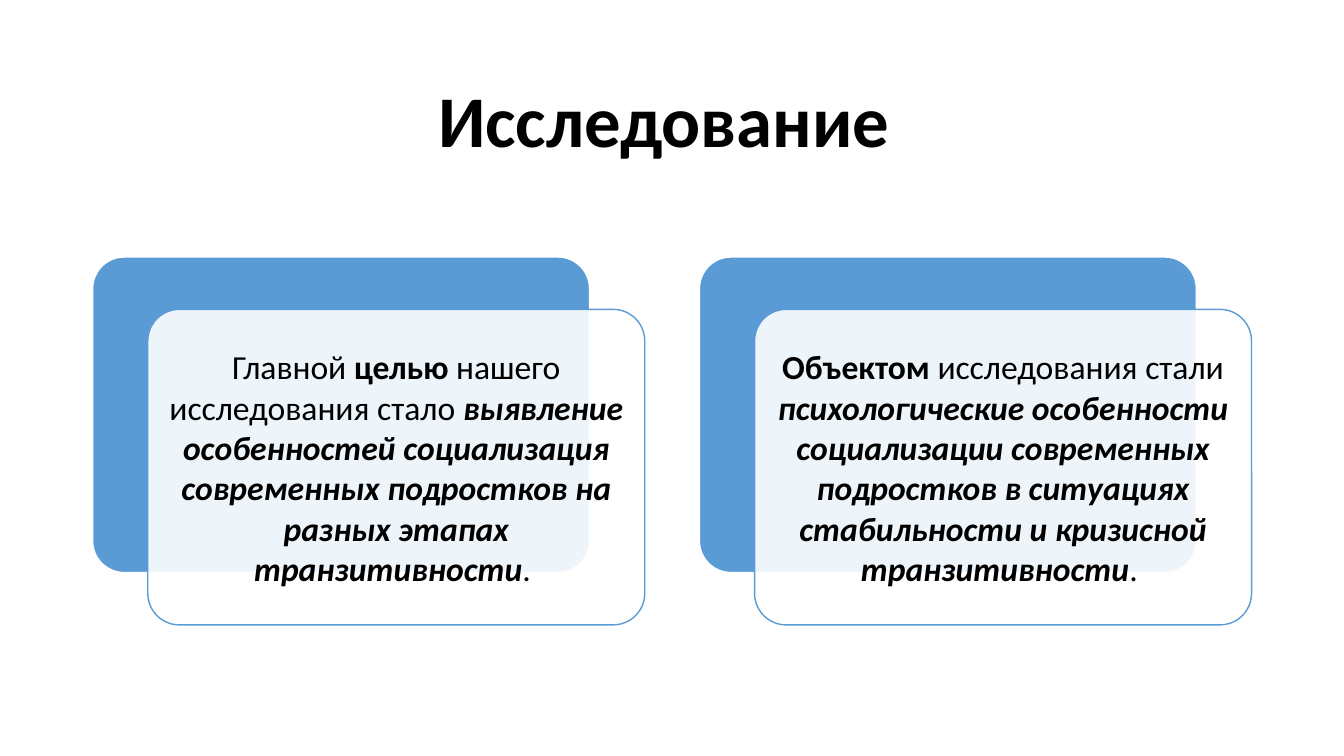
from lxml.etree import SubElement
from pptx import Presentation
from pptx.dml.color import RGBColor
from pptx.enum.shapes import MSO_SHAPE
from pptx.enum.text import MSO_ANCHOR, PP_ALIGN
from pptx.oxml.ns import qn
from pptx.util import Pt

COLORS = {"blue": "5B9BD5", "white": "FFFFFF", "black": "000000"}
FONT = "Calibri"

CARD_LEFT, CARD_TOP = 66.2, 183.6
CARD_WIDTH, CARD_HEIGHT = 355, 225.4
CARD_STEP = 433.4
FRONT_DX, FRONT_DY = 39.4, 37.4

# Each run is (text, bold, italic)
STATEMENTS = [
    [
        ("Главной ", False, False),
        ("целью", True, False),
        (" нашего исследования стало ", False, False),
        ("выявление особенностей социализация современных подростков "
         "на разных этапах транзитивности", True, True),
        (". ", False, False),
    ],
    [
        ("Объектом", True, False),
        (" исследования стали ", False, False),
        ("психологические особенности социализации современных подростков "
         "в ситуациях стабильности и кризисной транзитивности", True, True),
        (". ", False, False),
    ],
]


def rgb(name):
    return RGBColor.from_string(COLORS[name])


def write_centered(frame, runs, size):
    """Fill the frame with one centred paragraph and return the paragraph."""
    frame.word_wrap = True
    frame.vertical_anchor = MSO_ANCHOR.MIDDLE
    paragraph = frame.paragraphs[0]
    paragraph.alignment = PP_ALIGN.CENTER
    for text, bold, italic in runs:
        run = paragraph.add_run()
        run.text = text
        run.font.name = FONT
        run.font.size = Pt(size)
        run.font.bold = bold
        run.font.italic = italic
        run.font.color.rgb = rgb("black")
    return paragraph


def add_title(slide, text):
    title = slide.shapes.add_textbox(Pt(66.2), Pt(43.9), Pt(828), Pt(89.3))
    paragraph = write_centered(title.text_frame, [(text, True, False)], 52)
    paragraph.line_spacing = 0.9


def add_panel(slide, left, top, fill, line):
    panel = slide.shapes.add_shape(
        MSO_SHAPE.ROUNDED_RECTANGLE,
        Pt(left), Pt(top), Pt(CARD_WIDTH), Pt(CARD_HEIGHT))
    panel.adjustments[0] = 0.1
    panel.shadow.inherit = False
    panel.fill.solid()
    panel.fill.fore_color.rgb = rgb(fill)
    panel.line.color.rgb = rgb(line)
    panel.line.width = Pt(1)
    return panel


def set_fill_opacity(panel, percent):
    fill_color = panel.fill._xPr.find(qn("a:solidFill")).find(qn("a:srgbClr"))
    SubElement(fill_color, qn("a:alpha")).set("val", str(percent * 1000))


def add_statement_card(slide, left, runs):
    """Add a blue panel with an offset translucent panel that holds the text."""
    add_panel(slide, left, CARD_TOP, "blue", "white")
    front = add_panel(slide, left + FRONT_DX, CARD_TOP + FRONT_DY,
                      "white", "blue")
    set_fill_opacity(front, 90)
    frame = front.text_frame
    frame.margin_left = frame.margin_right = Pt(7.2)
    frame.margin_top = frame.margin_bottom = Pt(7.2)
    write_centered(frame, runs, 24)


def main():
    presentation = Presentation()
    presentation.slide_width = Pt(960)
    presentation.slide_height = Pt(540)
    slide = presentation.slides.add_slide(presentation.slide_layouts[6])
    add_title(slide, "Исследование ")
    for index, runs in enumerate(STATEMENTS):
        add_statement_card(slide, CARD_LEFT + index * CARD_STEP, runs)
    presentation.save("out.pptx")


if __name__ == "__main__":
    main()
